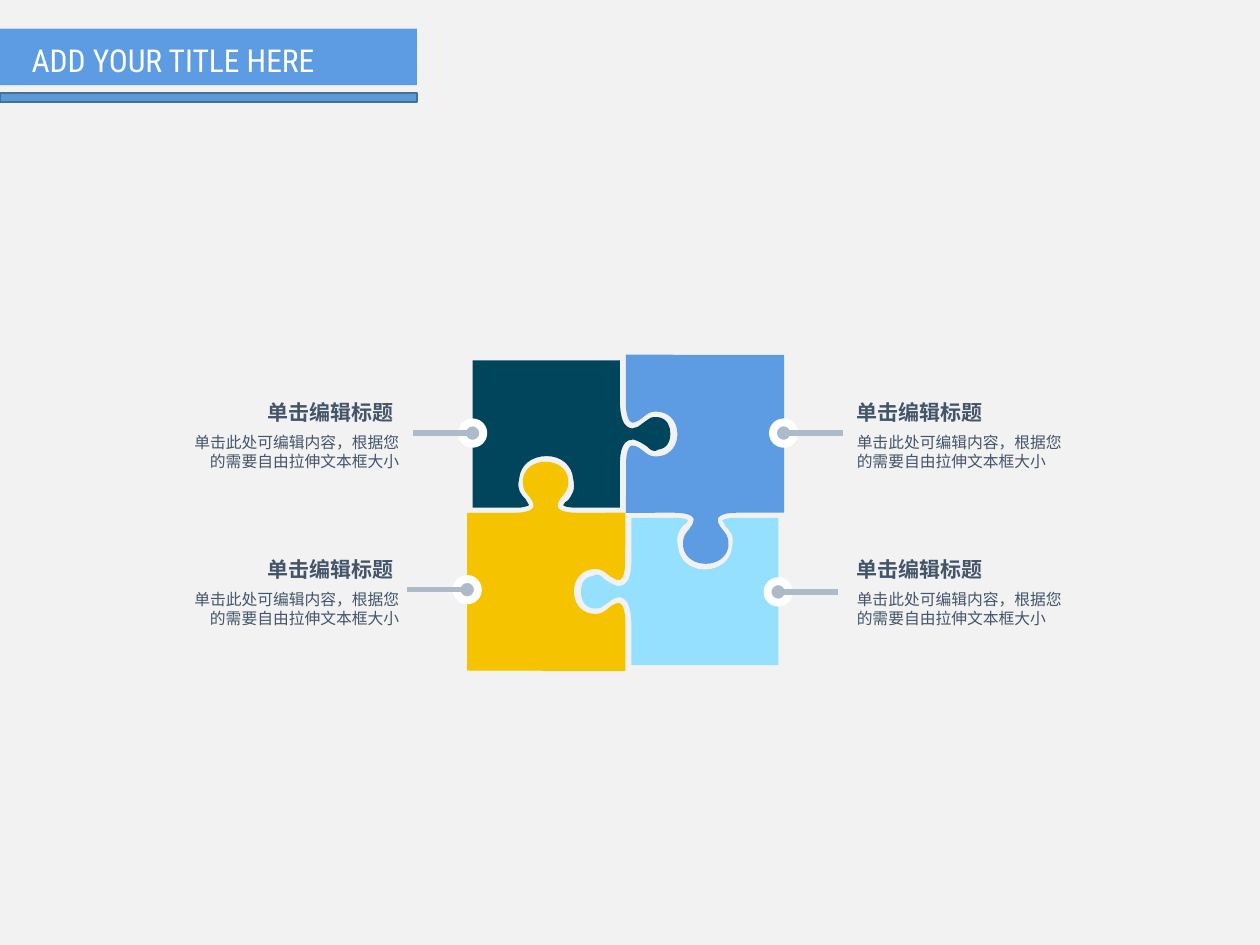
from math import cos, radians, sin

from lxml import etree
from pptx import Presentation
from pptx.dml.color import RGBColor
from pptx.enum.shapes import MSO_CONNECTOR, MSO_SHAPE
from pptx.enum.text import MSO_ANCHOR, MSO_AUTO_SIZE, PP_ALIGN
from pptx.oxml.ns import qn
from pptx.util import Pt

RECT, OVAL, STRAIGHT = MSO_SHAPE.RECTANGLE, MSO_SHAPE.OVAL, MSO_CONNECTOR.STRAIGHT
LEFT, RIGHT, TOP = PP_ALIGN.LEFT, PP_ALIGN.RIGHT, MSO_ANCHOR.TOP
FIXED = MSO_AUTO_SIZE.NONE

THEME = {
    "background": "F2F2F2", "white": "FFFFFF", "text": "445469", "leader": "ADBACA",
    "blue": "5D9CE3", "strip": "5B9BD5", "strip_edge": "41719C",
    "yellow": "F5C300", "navy": "01455C", "sky": "95E0FF",
    "title_font": "Roboto Condensed", "text_font": "Arial",
    "title_size": 18, "heading_size": 12, "body_size": 9,
}

TITLE = "ADD YOUR TITLE HERE"
HEADING = "单击编辑标题"
BODY = "单击此处可编辑内容，根据您的需要自由拉伸文本框大小"

# Callouts: side (1 right, -1 left), dot centre, heading top
CALLOUTS = [
    (1, (447.8, 247.5), 228.2),
    (1, (444.7, 338.3), 317.9),
    (-1, (270.1, 247.5), 228.2),
    (-1, (267, 337), 317.9),
]
# Text columns by side: heading left and width, body left, body alignment
COLUMNS = {1: (489.6, 88.6, 489.6, LEFT), -1: (153, 75.6, 108.5, RIGHT)}
BODY_WIDTH, BODY_OFFSET = 119.5, 19
DOT, LEADER_START, LEADER_END = 12.2, 3, 34.2

# Outlines around the puzzle centre: two numbers are a line, six a Bezier curve
CENTRE = (357.5, 293)
SOCKET_PIECE = [
    (-19.8, 32.4),
    (-11.9, 31, -11.2, 36, -5.4, 38.2), (-2.5, 39.6, -0.2, 36.7, -0.2, 27.4),
    (-0.2, 0), (-27.7, 0),
    (-37.8, 0, -40, -2.9, -38.5, -5.8), (-36.4, -10.8, -32, -11.5, -32.8, -19.4),
    (-34.9, -32.4, -56.5, -32.4, -58.7, -19.4),
    (-59.4, -11.5, -55.1, -10.8, -52.9, -5.8), (-51.5, -2.9, -53.6, 0, -63.7, 0),
    (-90.6, 0), (-90.6, 90.3), (-0.2, 90.3), (-0.2, 59.8),
    (-0.9, 52.6, -3.1, 50.4, -5.4, 51.8), (-11.2, 54, -11.9, 59, -19.8, 57.6),
    (-32.8, 55.4, -32.8, 34.6, -19.8, 32.4),
]
TAB_PIECE = [
    (-27.7, -2.9),
    (-32.8, -2.9, -34.9, -3.6, -35.6, -4.3), (-34.9, -5.8, -34.2, -6.5, -32.8, -7.2),
    (-30.6, -10.1, -28.4, -13, -29.9, -19.4), (-30.6, -27.4, -37.1, -32.4, -45, -32.4),
    (-53.6, -32.4, -60.1, -27.4, -60.8, -19.4),
    (-62.3, -13, -59.4, -10.1, -57.2, -7.9), (-56.5, -6.5, -55.8, -5.8, -55.1, -4.3),
    (-55.8, -3.6, -57.2, -3.6, -60.1, -2.9),
    (-87.3, -2.9), (-87.3, -87.1), (-3.2, -87.1), (-3.2, -63.4),
    (-3.2, -59, -2.5, -55.4, -1.8, -53.3), (-0.4, -49, 2.5, -48.2, 4, -48.2),
    (4.7, -48.2, 5.4, -49, 6.8, -49), (9, -50.4, 10.4, -51.8, 11.9, -52.6),
    (13.3, -54, 14.8, -54.7, 16.9, -54.7), (17.6, -54.7, 17.6, -54.7, 18.4, -54.7),
    (24.1, -54, 25.6, -49, 25.6, -45.4), (25.6, -41, 24.1, -36.7, 18.4, -36),
    (17.6, -35.3, 16.9, -35.3, 16.9, -35.3), (14.8, -35.3, 13.3, -36.7, 11.9, -38.2),
    (10.4, -38.9, 9, -40.3, 6.8, -41), (5.4, -41.8, 4.7, -41.8, 4, -41.8),
    (-3.2, -41.8, -3.2, -31, -3.2, -27.4), (-3.2, -2.9),
]
# Each outline is used twice, half a turn apart
PIECES = [
    (SOCKET_PIECE, 315, "yellow"), (SOCKET_PIECE, 135, "blue"),
    (TAB_PIECE, 315, "navy"), (TAB_PIECE, 135, "sky"),
]
TILT = 45  # the outlines are stored upright and drawn on a tilted frame


def rgb(name):
    return RGBColor.from_string(THEME[name])


def style(sp, fill, edge=None, edge_width=1):
    sp.shadow.inherit = False
    sp.fill.solid()
    sp.fill.fore_color.rgb = rgb(fill)
    if edge:
        sp.line.color.rgb = rgb(edge)
        sp.line.width = Pt(edge_width)
    else:
        sp.line.fill.background()


def add_filled(s, kind, box, *look):
    style(s.shapes.add_shape(kind, *map(Pt, box)), *look)


def write(tf, text, font, size, color, bold=False, align=LEFT):
    tf.word_wrap = True
    tf.auto_size = FIXED
    tf.vertical_anchor = TOP
    p = tf.paragraphs[0]
    p.alignment = align
    r = p.add_run()
    r.text = text
    r.font.name = THEME[font]
    r.font.size = Pt(THEME[size])
    r.font.bold = bold
    r.font.color.rgb = rgb(color)


def add_text(s, box, text, size, **look):
    tf = s.shapes.add_textbox(*map(Pt, box)).text_frame
    tf.margin_left = tf.margin_top = tf.margin_right = tf.margin_bottom = 0
    write(tf, text, "text_font", size, "text", **look)


def rotate(point, degrees):
    """Rotate clockwise about the origin."""
    x, y = point
    c, n = cos(radians(degrees)), sin(radians(degrees))
    return x * c - y * n, x * n + y * c


def add_piece(s, outline, rotation, fill):
    segments = [[tuple(map(Pt, rotate(segment[i:i + 2], TILT)))
                 for i in range(0, len(segment), 2)] for segment in outline]
    ends = [segment[-1] for segment in segments]
    builder = s.shapes.build_freeform(*ends[0])
    builder.add_line_segments(ends[1:], close=True)
    sp = builder.convert_to_shape()
    left, top = sp.left, sp.top
    geometry = sp.element.find(".//" + qn("a:path"))
    for line, segment in zip(geometry.findall(qn("a:lnTo")), segments[1:]):
        if len(segment) == 3:
            curve = etree.Element(qn("a:cubicBezTo"))
            for x, y in segment:
                etree.SubElement(curve, qn("a:pt"), x=str(x - left), y=str(y - top))
            geometry.replace(line, curve)
    middle = rotate((left + sp.width / 2, top + sp.height / 2), rotation)
    sp.left = int(Pt(CENTRE[0]) + middle[0] - sp.width / 2)
    sp.top = int(Pt(CENTRE[1]) + middle[1] - sp.height / 2)
    sp.rotation = rotation
    style(sp, fill)


def add_callout(s, side, dot, top):
    x, y = dot
    add_filled(s, OVAL, (x - DOT / 2, y - DOT / 2, DOT, DOT), "leader", "white", 4.5)
    line = s.shapes.add_connector(STRAIGHT, Pt(x + side * LEADER_START), Pt(y),
                                  Pt(x + side * LEADER_END), Pt(y))
    line.line.color.rgb = rgb("leader")
    line.line.width = Pt(3)
    etree.SubElement(line.element.spPr, qn("a:effectLst"))
    heading_left, heading_width, body_left, align = COLUMNS[side]
    add_text(s, (heading_left, top, heading_width, 14.4), HEADING, "heading_size", bold=True)
    add_text(s, (body_left, top + BODY_OFFSET, BODY_WIDTH, 21.6), BODY, "body_size",
             align=align)


def add_title(s):
    add_filled(s, RECT, (0, 16.3, 238.3, 32.4), "blue")
    add_filled(s, RECT, (0, 53.3, 238.3, 5), "strip", "strip_edge")
    title = s.shapes.title
    title.left, title.top, title.width, title.height = map(Pt, (10.8, 19.8, 216.7, 28.8))
    write(title.text_frame, TITLE, "title_font", "title_size", "white")
    title.element.getparent().append(title.element)  # in front of its bar


def main():
    prs = Presentation()
    prs.slide_width, prs.slide_height = Pt(720), Pt(540)
    s = prs.slides.add_slide(prs.slide_layouts[5])
    s.background.fill.solid()
    s.background.fill.fore_color.rgb = rgb("background")
    add_title(s)
    for piece in PIECES:
        add_piece(s, *piece)
    for callout in CALLOUTS:
        add_callout(s, *callout)
    prs.save("out.pptx")


if __name__ == "__main__":
    main()
